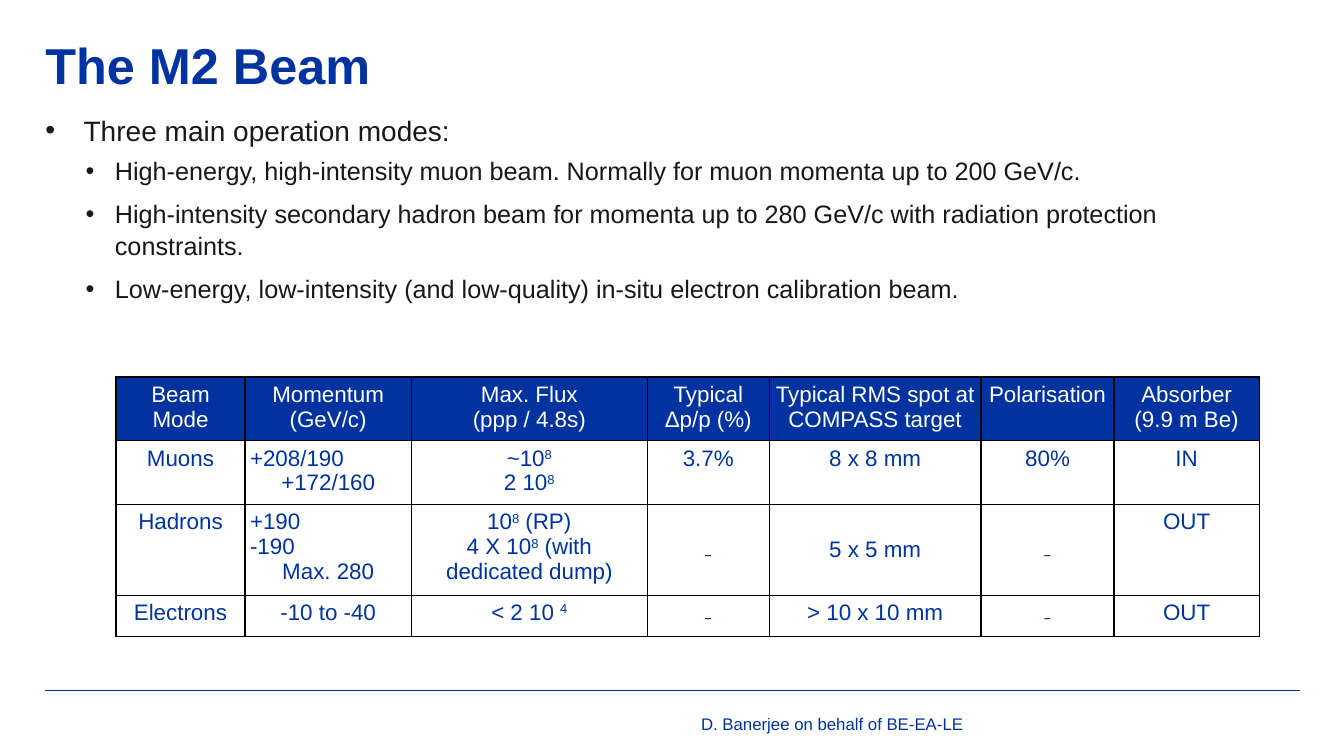
from dataclasses import dataclass

from lxml import etree
from pptx import Presentation
from pptx.dml.color import RGBColor
from pptx.enum.shapes import MSO_CONNECTOR
from pptx.enum.text import MSO_ANCHOR, PP_ALIGN
from pptx.oxml.ns import qn
from pptx.util import Inches, Pt

LEFT, CENTER = PP_ALIGN.LEFT, PP_ALIGN.CENTER
TOP, MIDDLE = MSO_ANCHOR.TOP, MSO_ANCHOR.MIDDLE
STRAIGHT = MSO_CONNECTOR.STRAIGHT
TITLE_ONLY = 5


@dataclass(frozen=True)
class Theme:
    """Colours, font and type sizes of the slide."""

    blue: str = "0033A0"
    ink: str = "181818"
    white: str = "FFFFFF"
    black: str = "000000"
    font: str = "Arial"
    title: int = 36
    lead: int = 20
    point: int = 18
    cell: int = 16
    footer: int = 12


THEME = Theme()

POINTS = [
    (0, "Three main operation modes:"),
    (1, "High-energy, high-intensity muon beam. Normally for muon momenta up to 200 GeV/c."),
    (1, "High-intensity secondary hadron beam for momenta up to 280 GeV/c with radiation "
        "protection constraints."),
    (1, "Low-energy, low-intensity (and low-quality) in-situ electron calibration beam."),
]
LEVELS = [
    {"size": THEME.lead, "indent": 0.38, "hanging": 0.38, "before": 6, "after": 0},
    {"size": THEME.point, "indent": 0.69, "hanging": 0.29, "before": 5, "after": 3},
]
COLUMN_WIDTHS = [1.28, 1.65, 2.34, 1.21, 2.1, 1.32, 1.44]
ROW_HEIGHT = 0.41
MOMENTUM_COLUMN = 1
CENTRED_CELLS = {(2, 3), (2, 4), (2, 5)}
BEAM_MODES = [
    ["Beam Mode", "Momentum\n(GeV/c)", "Max. Flux\n(ppp / 4.8s)", "Typical\nΔp/p (%)",
     "Typical RMS spot at COMPASS target", "Polarisation", "Absorber\n(9.9 m Be)"],
    ["Muons", "+208/190\n+172/160", "~10^8\n2 10^8", "3.7%", "8 x 8 mm", "80%", "IN"],
    ["Hadrons", "+190\n-190\nMax. 280", "10^8 (RP)\n4 X 10^8 (with dedicated dump)",
     "₋", "5 x 5 mm", "₋", "OUT"],
    ["Electrons", "-10 to -40", "< 2 10 ^4", "₋", "> 10 x 10 mm", "₋", "OUT"],
]


def set_values(target, values):
    """Set each named attribute of the target."""
    for name, value in values.items():
        setattr(target, name, value)


def set_insets(target, inset):
    """Give all four margins the same length."""
    sides = ("left", "top", "right", "bottom")
    set_values(target, {f"margin_{side}": Inches(inset) for side in sides})


def add_span(para, text, size, color, bold=False, raised=False):
    """Add one formatted run, optionally as a superscript."""
    span = para.add_run()
    span.text = text
    set_values(span.font, {"name": THEME.font, "size": Pt(size), "bold": bold})
    span.font.color.rgb = RGBColor.from_string(color)
    if raised:
        span.font._element.set("baseline", "30000")


def add_formula(para, text, size, color):
    """Add text in which the character after each caret is raised."""
    first, *others = text.split("^")
    add_span(para, first, size, color)
    for part in others:
        add_span(para, part[0], size, color, raised=True)
        if part[1:]:
            add_span(para, part[1:], size, color)


def next_paragraph(frame, index):
    """Return the first paragraph of the frame or a new one."""
    return frame.add_paragraph() if index else frame.paragraphs[0]


def add_bullet(para, level):
    """Give the paragraph a hanging bullet."""
    properties = para._p.get_or_add_pPr()
    properties.set("marL", str(Inches(level["indent"])))
    properties.set("indent", str(-Inches(level["hanging"])))
    etree.SubElement(properties, qn("a:buFont")).set("typeface", THEME.font)
    etree.SubElement(properties, qn("a:buChar")).set("char", "•")


def add_cell_border(cell):
    """Draw a thin line on every side of the cell."""
    properties = cell._tc.get_or_add_tcPr()
    for index, side in enumerate(("a:lnL", "a:lnR", "a:lnT", "a:lnB")):
        line = etree.Element(qn(side), w=str(Pt(1)))
        fill = etree.SubElement(line, qn("a:solidFill"))
        etree.SubElement(fill, qn("a:srgbClr")).set("val", THEME.black)
        properties.insert(index, line)


def place_title(page, box, text):
    """Move and format the title placeholder."""
    title = page.shapes.title
    set_values(title, dict(zip(("left", "top", "width", "height"), map(Inches, box))))
    frame = title.text_frame
    set_insets(frame, 0)
    set_values(frame, {"vertical_anchor": TOP, "word_wrap": True})
    para = frame.paragraphs[0]
    set_values(para, {"alignment": LEFT, "line_spacing": 0.9})
    add_span(para, text, THEME.title, THEME.blue, bold=True)


def place_points(page, box, points):
    """Add the bulleted list."""
    frame = page.shapes.add_textbox(*map(Inches, box)).text_frame
    frame.word_wrap = True
    set_insets(frame, 0)
    for index, (depth, text) in enumerate(points):
        level = LEVELS[depth]
        para = next_paragraph(frame, index)
        add_bullet(para, level)
        before = level["before"] if index else 0
        set_values(para, {"level": depth, "line_spacing": 1.05,
                          "space_before": Pt(before), "space_after": Pt(level["after"])})
        add_span(para, text, level["size"], THEME.ink)


def fill_cell(cell, text, row, column):
    """Fill and format one table cell."""
    header = row == 0
    set_insets(cell, 0.05)
    cell.vertical_anchor = MIDDLE if (row, column) in CENTRED_CELLS else TOP
    cell.fill.solid()
    cell.fill.fore_color.rgb = RGBColor.from_string(THEME.blue if header else THEME.white)
    add_cell_border(cell)
    lines = text.split("\n")
    for index, line in enumerate(lines):
        para = next_paragraph(cell.text_frame, index)
        flush_left = not header and column == MOMENTUM_COLUMN and index < len(lines) - 1
        para.alignment = LEFT if flush_left else CENTER
        add_formula(para, line, THEME.cell, THEME.white if header else THEME.blue)


def place_table(page, left, top, rows):
    """Add the table of beam modes."""
    size = (Inches(sum(COLUMN_WIDTHS)), Inches(ROW_HEIGHT * len(rows)))
    table = page.shapes.add_table(
        len(rows), len(COLUMN_WIDTHS), Inches(left), Inches(top), *size).table
    for column, width in zip(table.columns, COLUMN_WIDTHS):
        column.width = Inches(width)
    for row, texts in enumerate(rows):
        table.rows[row].height = Inches(ROW_HEIGHT)
        for column, text in enumerate(texts):
            fill_cell(table.cell(row, column), text, row, column)


def place_footer(page, box, text):
    """Add the footer rule and the centred speaker line below it."""
    left, top, width, height = box
    rule = page.shapes.add_connector(
        STRAIGHT, Inches(left), Inches(top), Inches(left + width), Inches(top))
    rule.line.color.rgb = RGBColor.from_string(THEME.blue)
    rule.line.width = Pt(0.75)
    etree.SubElement(rule._element.spPr, qn("a:effectLst"))
    speaker = (left + 4.21, top + 0.13, 7.19, height - 0.13)
    frame = page.shapes.add_textbox(*map(Inches, speaker)).text_frame
    set_values(frame, {"word_wrap": True, "vertical_anchor": MIDDLE})
    frame.paragraphs[0].alignment = CENTER
    add_span(frame.paragraphs[0], text, THEME.footer, THEME.blue)


def main():
    """Build and save the slide."""
    deck = Presentation()
    set_values(deck, {"slide_width": Inches(13.33), "slide_height": Inches(7.5)})
    page = deck.slides.add_slide(deck.slide_layouts[TITLE_ONLY])
    place_title(page, (0.45, 0.41, 12.44, 0.66), "The M2 Beam")
    place_points(page, (0.45, 1.11, 12.36, 3.15), POINTS)
    place_table(page, 1.15, 3.74, BEAM_MODES)
    place_footer(page, (0.45, 6.85, 12.44, 0.53), "D. Banerjee on behalf of BE-EA-LE")
    deck.save("out.pptx")


if __name__ == "__main__":
    main()
